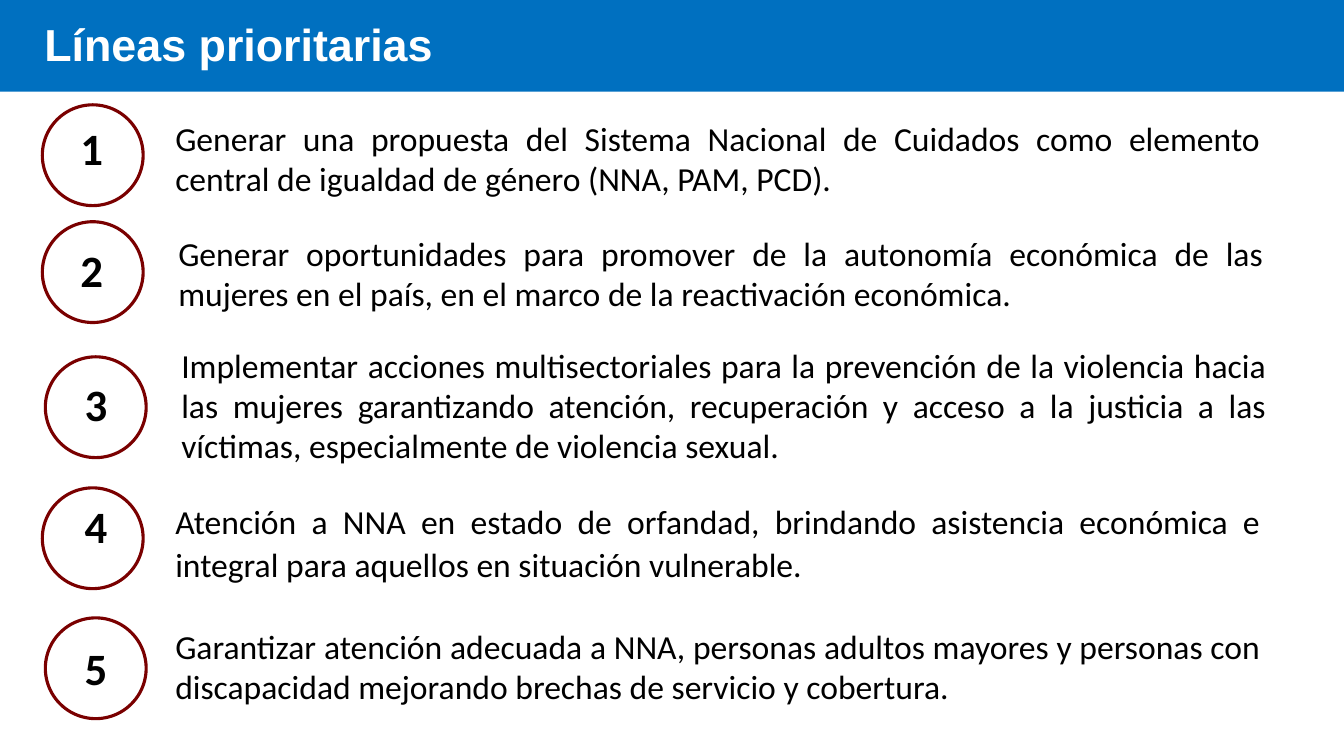
from dataclasses import dataclass

from pptx import Presentation
from pptx.dml.color import RGBColor
from pptx.enum import shapes, text
from pptx.util import Inches, Pt

TITLE = "Líneas prioritarias"
# Each priority: wording, circle (left, top), number (left, top), wording (left, top, height), line spacing
PRIORITIES = [
    ("Generar una propuesta del Sistema Nacional de Cuidados como elemento central de "
     "igualdad de género (NNA, PAM, PCD).",
     (0.42, 1.04), (0.7, 1.15), (1.64, 1.12, 0.91), 1.0),
    ("Generar oportunidades para promover de la autonomía económica de las mujeres en el "
     "país, en el marco de la reactivación económica.",
     (0.42, 2.2), (0.7, 2.36), (1.67, 2.26, 0.91), 1.0),
    ("Implementar acciones multisectoriales para la prevención de la violencia hacia las "
     "mujeres garantizando atención, recuperación y acceso a la justicia a las víctimas, "
     "especialmente de violencia sexual.",
     (0.45, 3.54), (0.74, 3.69), (1.7, 3.37, 1.31), 1.0),
    ("Atención a NNA en estado de orfandad, brindando asistencia económica e integral para "
     "aquellos en situación vulnerable.",
     (0.42, 4.84), (0.74, 4.9), (1.64, 4.89, 0.97), 1.07),
    ("Garantizar atención adecuada a NNA, personas adultos mayores y personas con "
     "discapacidad mejorando brechas de servicio y cobertura.",
     (0.45, 6.13), (0.74, 6.31), (1.64, 6.16, 0.91), 1.0),
]
CIRCLE_SIZE = 1
NUMBER_SIZE = (0.43, 0.64)
WORDING_WIDTH = 10.96


@dataclass(frozen=True)
class Theme:
    """Colours, fonts and type sizes of the slide."""
    band: RGBColor = RGBColor(0x00, 0x70, 0xC0)
    ring: RGBColor = RGBColor(0x7A, 0x00, 0x00)
    ink: RGBColor = RGBColor(0x00, 0x00, 0x00)
    paper: RGBColor = RGBColor(0xFF, 0xFF, 0xFF)
    title_font: str = "Arial"
    body_font: str = "Calibri"
    large: int = 32
    body: int = 24


THEME = Theme()


def style_text(para, font_name, size, colour, bold):
    """Format every run of a paragraph."""
    for span in para.runs:
        span.font.name = font_name
        span.font.size = Pt(size)
        span.font.color.rgb = colour
        span.font.bold = bold


def add_title(page):
    """Turn the title placeholder into the band across the top."""
    title = page.shapes.title
    title.left, title.top = Inches(0), Inches(-0.05)
    title.width, title.height = Inches(13.33), Inches(0.96)
    title.fill.solid()
    title.fill.fore_color.rgb = THEME.band
    frame = title.text_frame
    frame.text = TITLE
    frame.margin_left = Inches(0.44)
    frame.vertical_anchor = text.MSO_ANCHOR.MIDDLE
    para = frame.paragraphs[0]
    para.alignment = text.PP_ALIGN.LEFT
    style_text(para, THEME.title_font, THEME.large, THEME.paper, True)


def add_circle(page, left, top):
    """Draw the ring around a number."""
    circle = page.shapes.add_shape(
        shapes.MSO_SHAPE.OVAL, *map(Inches, (left, top, CIRCLE_SIZE, CIRCLE_SIZE)))
    circle.shadow.inherit = False
    circle.fill.background()
    circle.line.color.rgb = THEME.ring
    circle.line.width = Pt(2.25)


def add_text(page, words, area, size, bold=False, wrap=True):
    """Add a text box and return its paragraph."""
    frame = page.shapes.add_textbox(*map(Inches, area)).text_frame
    frame.word_wrap = wrap
    frame.text = words
    para = frame.paragraphs[0]
    style_text(para, THEME.body_font, size, THEME.ink, bold)
    return para


def main():
    """Build the slide and save it."""
    deck = Presentation()
    deck.slide_width, deck.slide_height = Inches(13.33), Inches(7.5)
    page = deck.slides.add_slide(deck.slide_layouts.get_by_name("Title Only"))
    add_title(page)
    for number, (words, ring, digit, wording, spacing) in enumerate(PRIORITIES, 1):
        add_circle(page, *ring)
        add_text(page, str(number), digit + NUMBER_SIZE, THEME.large, bold=True, wrap=False)
        left, top, height = wording
        para = add_text(page, words, (left, top, WORDING_WIDTH, height), THEME.body)
        para.alignment = text.PP_ALIGN.JUSTIFY
        para.line_spacing = spacing
    deck.save("out.pptx")


if __name__ == "__main__":
    main()
